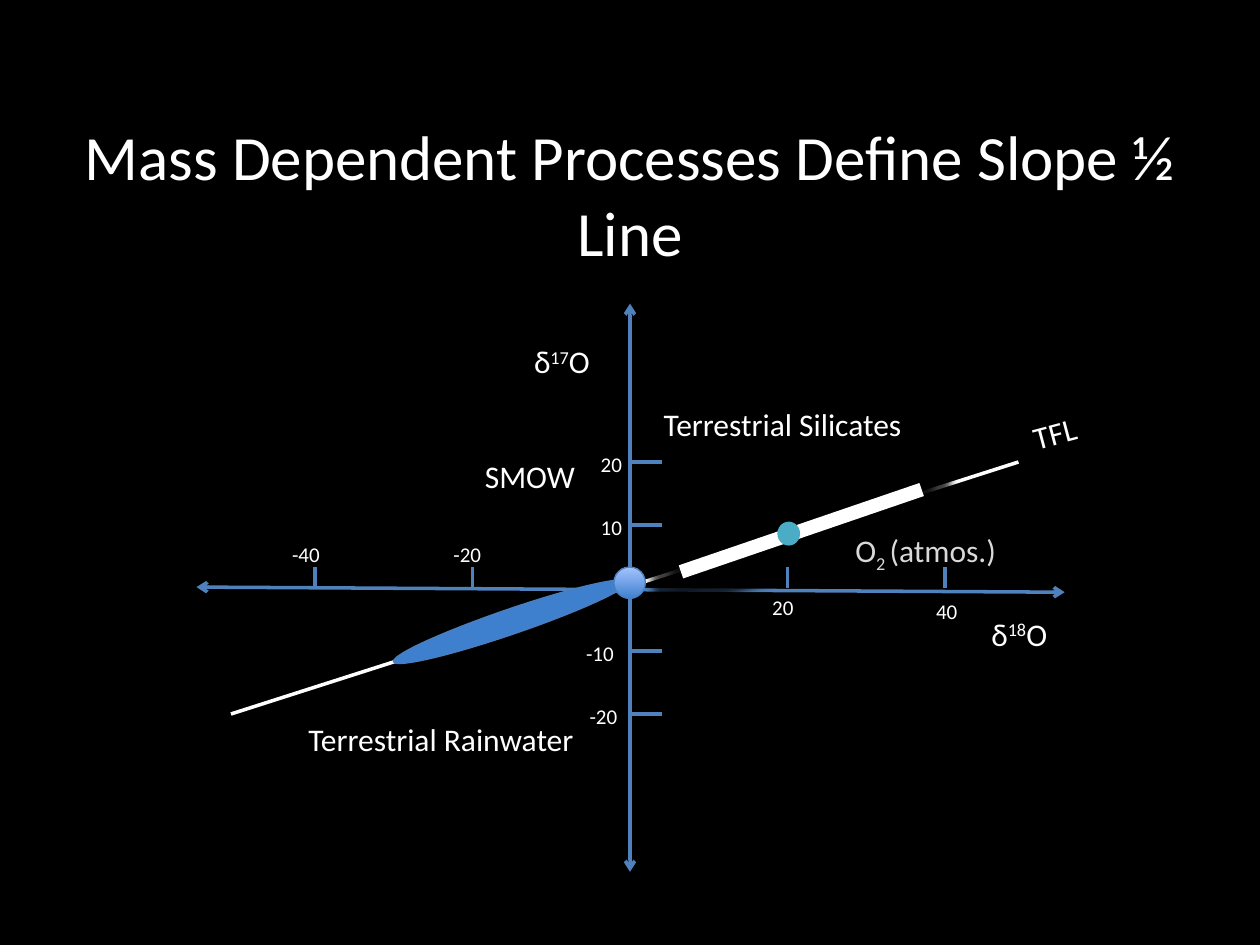
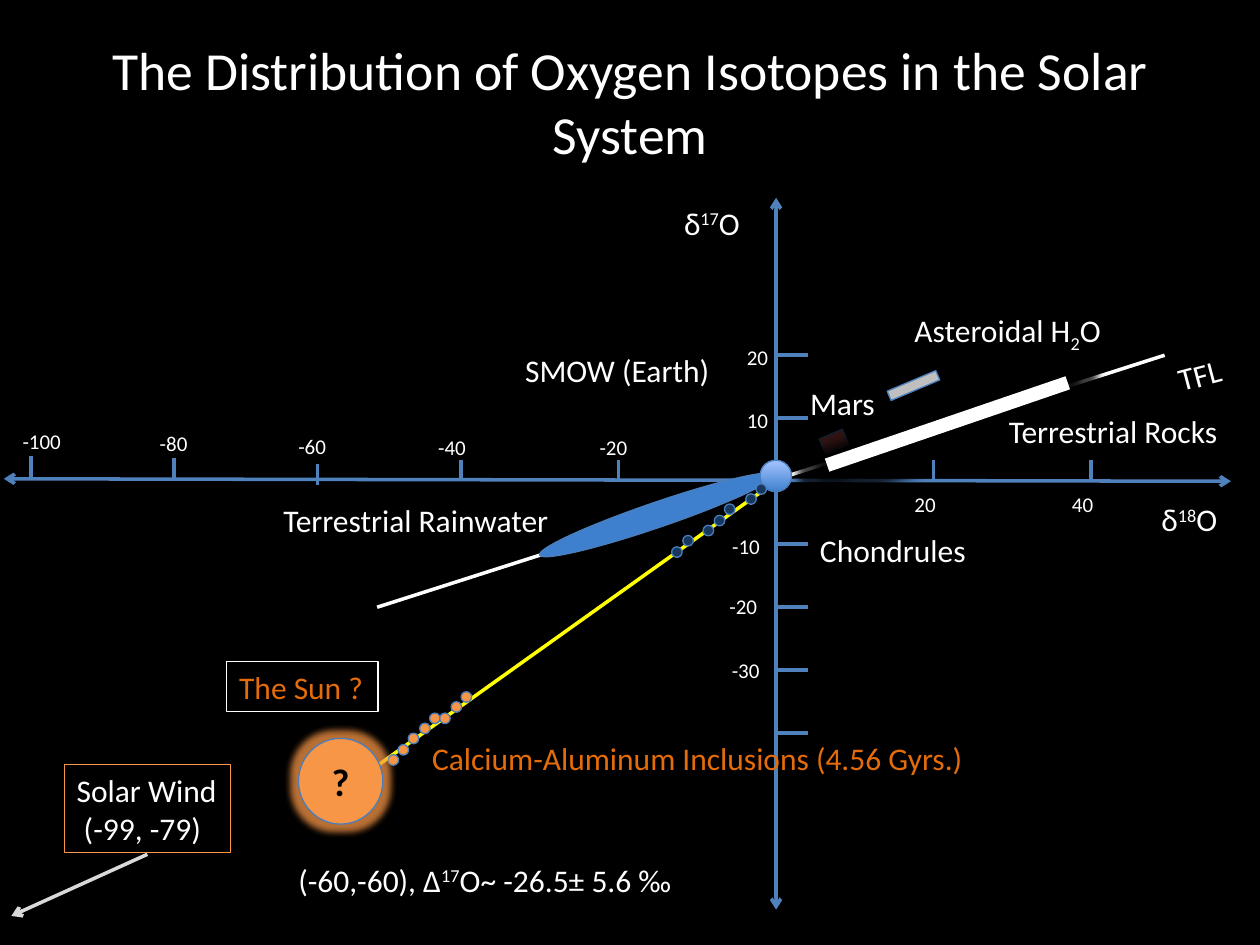
from lxml import etree
from pptx import Presentation
from pptx.dml.color import RGBColor
from pptx.enum.shapes import MSO_CONNECTOR, MSO_SHAPE
from pptx.enum.text import MSO_ANCHOR, MSO_AUTO_SIZE, PP_ALIGN
from pptx.oxml.ns import qn
from pptx.util import Pt

STRAIGHT = MSO_CONNECTOR.STRAIGHT
OVAL = MSO_SHAPE.OVAL
RECTANGLE = MSO_SHAPE.RECTANGLE
MIDDLE = MSO_ANCHOR.MIDDLE
CENTER = PP_ALIGN.CENTER
FIT_SHAPE = MSO_AUTO_SIZE.SHAPE_TO_FIT_TEXT
NO_FIT = MSO_AUTO_SIZE.NONE

FONT = "Calibri"
BLACK = "000000"
WHITE = "FFFFFF"
AXIS_BLUE = "4F81BD"
OUTLINE_BLUE = "4B7EBC"
WATER_BLUE = "3F80CE"
LIGHT_BLUE = "A4C4FF"
CHONDRULE_NAVY = "17375E"
SUN_ORANGE = "F79646"
TEXT_ORANGE = "E46C0A"
PALE_GREY = "D9D9D9"
SUPERSCRIPT = 30000
SUBSCRIPT = -25000
TFL_ANGLE = 341.1
FIELD_ANGLE = 337.1
X_UNIT = 4.5
Y_UNIT = 3.6


def rgb(value):
    return RGBColor.from_string(value)


def style_font(font, size, color, bold=False):
    font.name = FONT
    font.size = Pt(size)
    font.bold = bold
    font.color.rgb = rgb(color)


def add_page(deck, title, top, height, size):
    page = deck.slides.add_slide(deck.slide_layouts[5])
    page.background.fill.solid()
    page.background.fill.fore_color.rgb = rgb(BLACK)
    box = page.shapes.title
    box.left, box.top, box.width, box.height = Pt(36), Pt(top), Pt(648), Pt(height)
    frame = box.text_frame
    frame.text = title
    frame.auto_size = NO_FIT
    frame.vertical_anchor = MIDDLE
    frame.paragraphs[0].alignment = CENTER
    style_font(frame.paragraphs[0].runs[0].font, size, WHITE)
    return page


def add_label(page, text, left, top, width, size=18, color=WHITE, angle=0,
              wrap=False, border=None):
    lines = text.split("\n") if isinstance(text, str) else [text]
    box = page.shapes.add_textbox(Pt(left), Pt(top), Pt(width),
                                  Pt(len(lines) * size * 1.2 + 7.2))
    box.rotation = angle
    frame = box.text_frame
    frame.word_wrap = wrap
    frame.auto_size = FIT_SHAPE
    for index, line in enumerate(lines):
        para = frame.add_paragraph() if index else frame.paragraphs[0]
        spans = [(line, 0)] if isinstance(line, str) else line
        for words, baseline in spans:
            span = para.add_run()
            span.text = words
            style_font(span.font, size, color)
            if baseline:
                span._r.get_or_add_rPr().set("baseline", str(baseline))
    if border:
        box.line.color.rgb = rgb(border)
        box.line.width = Pt(0.75)


def add_line(page, start, end, color=AXIS_BLUE, head=False, tail=False):
    line = page.shapes.add_connector(STRAIGHT, Pt(start[0]), Pt(start[1]),
                                     Pt(end[0]), Pt(end[1]))
    line.line.color.rgb = rgb(color)
    line.line.width = Pt(2)
    outline = line.line._get_or_add_ln()
    for wanted, tag in ((head, "a:headEnd"), (tail, "a:tailEnd")):
        if wanted:
            etree.SubElement(outline, qn(tag)).set("type", "arrow")
    etree.SubElement(line._element.spPr, qn("a:effectLst"))


def add_figure(page, kind, left, top, width, height, fill, outline=OUTLINE_BLUE, angle=0):
    figure = page.shapes.add_shape(kind, Pt(left), Pt(top), Pt(width), Pt(height))
    figure.shadow.inherit = False
    figure.rotation = angle
    figure.fill.solid()
    figure.fill.fore_color.rgb = rgb(fill)
    if outline:
        figure.line.color.rgb = rgb(outline)
        figure.line.width = Pt(0.75)
    else:
        figure.line.fill.background()
    return figure


def add_glow(figure, color, radius, opacity):
    effects = figure._element.spPr.find(qn("a:effectLst"))
    glow = etree.SubElement(effects, qn("a:glow"), rad=str(int(Pt(radius))))
    tint = etree.SubElement(glow, qn("a:srgbClr"), val=color)
    etree.SubElement(tint, qn("a:alpha"), val=str(opacity * 1000))


def add_dots(page, corners, color):
    for left, top in corners:
        add_figure(page, OVAL, left, top, 6, 6, color)


def add_isotope(page, mass, left, top):
    add_label(page, [("δ", 0), (mass, SUPERSCRIPT), ("O", 0)], left, top, 48.2)


def add_tick_labels(page, origin, labels):
    for text, dx, dy in labels:
        width = 30.2 if text.startswith("-") else 26.6
        add_label(page, text, origin[0] + dx, origin[1] + dy, width, 12)


def draw_axes(page, origin, x_start, x_end, y_top, y_bottom):
    x, y = origin
    add_line(page, (x, y_top), (x, y_bottom), head=True, tail=True)
    add_line(page, x_start, x_end, head=True, tail=True)
    add_line(page, (x - 228, y + 72), (x + 222, y - 72), WHITE)


def draw_reservoirs(page, origin):
    x, y = origin
    add_figure(page, OVAL, x - 139, y + 12, 141.8, 14.4, WATER_BLUE, angle=TFL_ANGLE)
    rocks = add_figure(page, RECTANGLE, x + 25.2, y - 36.7, 145.4, 7.9, WHITE,
                       None, TFL_ANGLE)
    add_glow(rocks, BLACK, 10, 75)
    smow = add_figure(page, OVAL, x - 9.2, y - 12, 18, 18, WATER_BLUE)
    smow.fill.gradient()
    smow.fill.gradient_angle = 90
    for stop, color in zip(smow.fill.gradient_stops, (WATER_BLUE, LIGHT_BLUE)):
        stop.color.rgb = rgb(color)


def draw_ticks(page, origin, y_values):
    x, y = origin
    for value in (-40, -20, 20, 40):
        tick = x + value * X_UNIT
        add_line(page, (tick, y - 12), (tick, y))
    for value in y_values:
        tick = y - value * Y_UNIT
        add_line(page, (x + 18, tick), (x, tick))
    add_tick_labels(page, origin, [
        ("10", -23.8, -45.8), ("20", -23.8, -81.8), ("-10", -32.2, 26.3),
        ("-20", -108, -30), ("-40", -200.2, -30),
    ])


def build_slope_page(deck):
    page = add_page(deck, "Mass Dependent Processes Define Slope ½ Line", 41.8, 137.5, 36)
    origin = (360, 336)
    draw_axes(page, origin, (112.3, 335.5), (608.4, 338.4), 173.5, 498.2)
    draw_reservoirs(page, origin)
    draw_ticks(page, origin, (20, 10, -10, -20))
    add_figure(page, OVAL, 444.2, 298.1, 13, 13.7, "4BACC6", None)
    add_label(page, [("O", 0), ("2 ", SUBSCRIPT), ("(atmos.)", 0)],
              481.7, 300.2, 97.2, color=PALE_GREY)
    add_tick_labels(page, origin, [("20", 74.2, 0.2), ("40", 167.8, 2.4),
                                   ("-20", -30.2, 62.2)])
    add_label(page, "TFL", 583.2, 232.6, 39.6, angle=345.1)
    add_isotope(page, "18", 559.4, 347.8)
    add_isotope(page, "17", 298.1, 192.2)
    for text, left, top, width in (
        ("Terrestrial Rainwater", 169.2, 408.2, 167.8),
        ("SMOW", 270, 257.8, 66.2),
        ("Terrestrial Silicates", 372.2, 228.2, 151.9),
    ):
        add_label(page, text, left, top, width)


def build_solar_system_page(deck):
    page = add_page(deck, "The Distribution of Oxygen Isotopes in the Solar System",
                    18, 79.9, 30.6)
    origin = (443.5, 275)
    draw_axes(page, origin, (2.2, 273.6), (703.4, 275), 113, 519.8)
    add_line(page, (215.3, 437.8), origin, "FFFF00")
    add_figure(page, RECTANGLE, 469.4, 247.7, 14.4, 9.4, "C0504D", angle=FIELD_ANGLE)
    draw_reservoirs(page, origin)
    add_figure(page, RECTANGLE, 506.9, 217.4, 30.2, 5.8, "BFBFBF", angle=FIELD_ANGLE)
    add_dots(page, [(408.2, 294.5), (390.2, 306), (414, 288), (383.8, 312.5),
                    (426.2, 282.2), (432, 276.5), (401.8, 300.2)], CHONDRULE_NAVY)
    add_dots(page, [(245.5, 407.5), (257.8, 401), (263.5, 395.3), (251.3, 407.5),
                    (221.8, 431.3), (233.3, 419), (239.8, 413.3), (227.5, 425.5)],
             SUN_ORANGE)
    draw_ticks(page, origin, (20, 10, -10, -20, -30, -40))
    add_tick_labels(page, origin, [("20", 72, 2.2), ("40", 162, 2.2),
                                   ("-20", -33.8, 60.5), ("-30", -32.4, 97.2)])
    for text, tick, top, left, label_top, width in (
        ("-60", 181.4, 265, 163.4, 244, 30.2),
        ("-80", 99.4, 262, 84.2, 242.6, 30.2),
        ("-100", 17.6, 260.6, 5.8, 241.2, 36.7),
    ):
        add_line(page, (tick, top), (tick, top + 12))
        add_label(page, text, left, label_top, width, 12)

    add_label(page, "TFL", 666, 199.4, 39.6, angle=345.1)
    add_isotope(page, "18", 656.6, 282.2)
    add_isotope(page, "17", 383.8, 113)
    for text, left, top, width in (
        ("Mars", 455.8, 216, 54.7),
        ("Terrestrial Rainwater", 154.8, 283, 167.8),
        ([("Asteroidal H", 0), ("2", SUBSCRIPT), ("O", 0)], 515.5, 174.2, 122.4),
        ("Chondrules", 461.5, 300.2, 98.6),
        ("Terrestrial Rocks", 569.5, 231.8, 134.6),
        ("SMOW (Earth)", 293, 197.3, 121),
        ([("(-60,-60), Δ", 0), ("17", SUPERSCRIPT), ("O~ -26.5± 5.6 ‰", 0)],
         163.4, 488.2, 231.8),
    ):
        add_label(page, text, left, top, width)
    add_label(page, "Calcium-Aluminum Inclusions (4.56 Gyrs.)", 239.8, 419, 321.1,
              color=TEXT_ORANGE)
    add_label(page, "The Sun ?", 129.6, 378, 86.4, color=TEXT_ORANGE, wrap=True,
              border=WHITE)
    add_line(page, (84.2, 488.2), (6.5, 523.4), PALE_GREY, tail=True)

    sun = add_figure(page, OVAL, 170.6, 421.9, 48.2, 49, SUN_ORANGE)
    add_glow(sun, SUN_ORANGE, 8, 75)
    frame = sun.text_frame
    frame.text = "?"
    frame.vertical_anchor = MIDDLE
    frame.paragraphs[0].alignment = CENTER
    style_font(frame.paragraphs[0].runs[0].font, 22, BLACK, True)
    add_label(page, "Solar Wind\n (-99, -79)", 36.7, 437, 95, border=SUN_ORANGE)


def main():
    deck = Presentation()
    deck.slide_width = Pt(720)
    deck.slide_height = Pt(540)
    build_slope_page(deck)
    build_solar_system_page(deck)
    deck.save("out.pptx")


if __name__ == "__main__":
    main()
